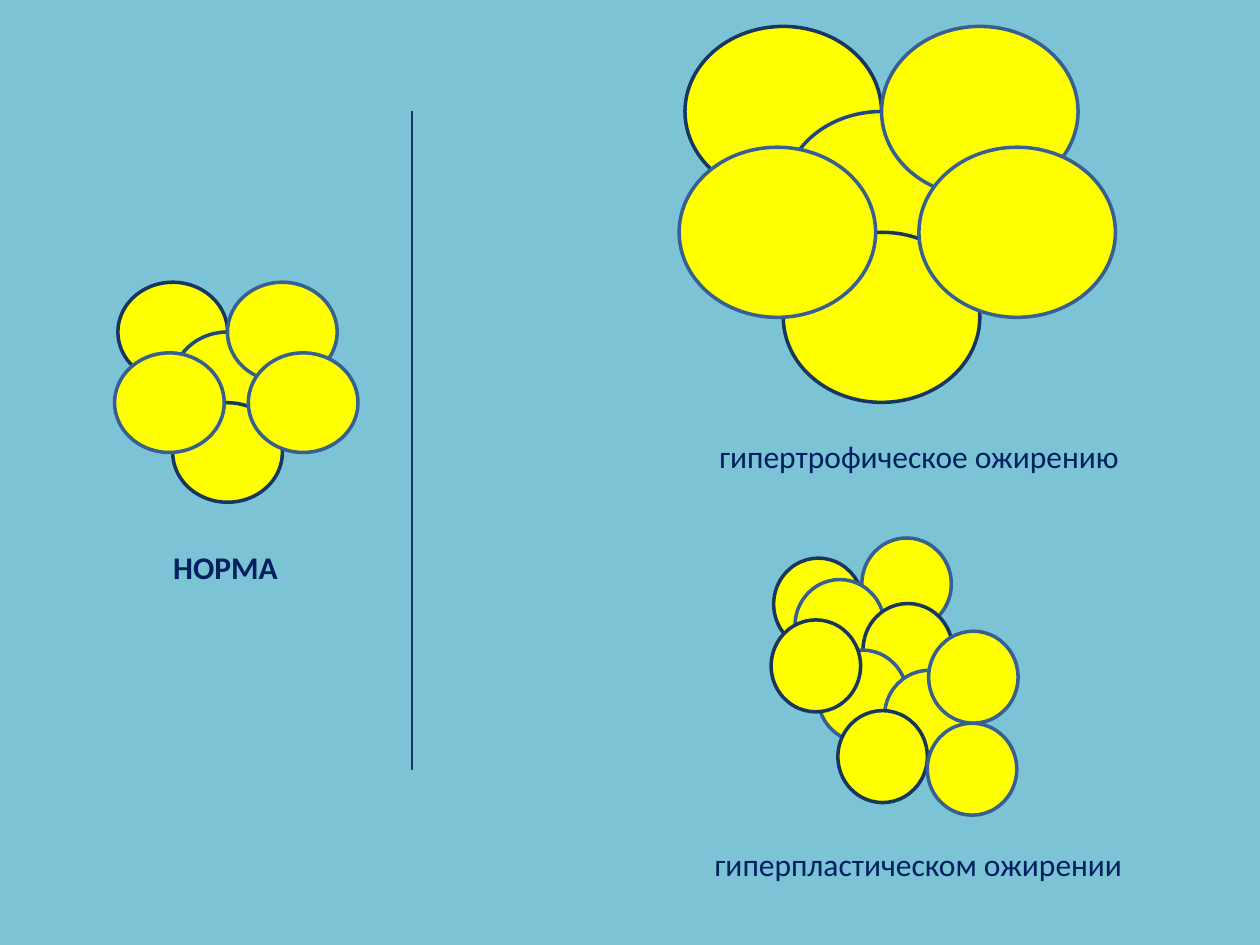
from dataclasses import dataclass

from lxml.etree import SubElement
from pptx import Presentation
from pptx.dml.color import RGBColor as Rgb
from pptx.enum.shapes import MSO_CONNECTOR as Connector, MSO_SHAPE as Shape
from pptx.enum.text import MSO_AUTO_SIZE as AutoSize, PP_ALIGN as Align
from pptx.oxml.ns import qn
from pptx.util import Inches, Pt


@dataclass(frozen=True)
class Theme:
    background: Rgb = Rgb.from_string("7CC3D6")
    fat: Rgb = Rgb.from_string("FFFF00")
    dark: Rgb = Rgb.from_string("17375E")
    medium: Rgb = Rgb.from_string("1F497D")
    light: Rgb = Rgb.from_string("376092")
    text: Rgb = Rgb.from_string("002060")
    font: str = "Calibri"
    text_size: Pt = Pt(18)
    cell_line: Pt = Pt(2)
    divider_line: Pt = Pt(0.75)


THEME = Theme()

# Cells from back to front: left and top in cell widths and heights, outline.
ROSETTE = [
    (0.03, 0, THEME.dark),
    (0.53, 0.5, THEME.medium),
    (1.03, 0, THEME.light),
    (0.53, 1.21, THEME.dark),
    (0, 0.71, THEME.light),
    (1.22, 0.71, THEME.light),
]

# Cells from back to front: left and top in inches, outline.
HYPERPLASTIC_CELLS = [
    (6.14, 4.43, THEME.dark),
    (6.84, 4.27, THEME.light),
    (6.31, 4.6, THEME.light),
    (6.85, 4.79, THEME.dark),
    (6.49, 5.16, THEME.light),
    (7.02, 5.32, THEME.light),
    (7.37, 5.01, THEME.light),
    (6.12, 4.92, THEME.dark),
    (6.65, 5.64, THEME.dark),
    (7.36, 5.74, THEME.light),
]


class SlideBuilder:
    def __init__(self, slide, theme):
        self.slide = slide
        self.theme = theme
        fill = slide.background.fill
        fill.solid()
        fill.fore_color.rgb = theme.background

    def cluster(self, cells, width, height):
        """Group equal ellipses; cells holds (left, top, outline) in inches."""
        group = self.slide.shapes.add_group_shape()
        for left, top, outline in cells:
            cell = group.shapes.add_shape(
                Shape.OVAL, Inches(left), Inches(top), Inches(width), Inches(height)
            )
            cell.shadow.inherit = False
            cell.fill.solid()
            cell.fill.fore_color.rgb = self.theme.fat
            cell.line.color.rgb = outline
            cell.line.width = self.theme.cell_line

    def rosette(self, left, top, width, height):
        """Six cells around a centre, scaled to the given cell size."""
        cells = [
            (left + column * width, top + row * height, outline)
            for column, row, outline in ROSETTE
        ]
        self.cluster(cells, width, height)

    def caption(self, text, left, top, width, bold=False):
        box = self.slide.shapes.add_textbox(
            Inches(left), Inches(top), Inches(width), Inches(0.4)
        )
        frame = box.text_frame
        frame.word_wrap = True
        frame.auto_size = AutoSize.SHAPE_TO_FIT_TEXT
        para = frame.paragraphs[0]
        para.text = text
        para.alignment = Align.CENTER
        para.font.name = self.theme.font
        para.font.size = self.theme.text_size
        para.font.bold = bold
        para.font.color.rgb = self.theme.text

    def divider(self, left, top, bottom):
        line = self.slide.shapes.add_connector(
            Connector.STRAIGHT, Inches(left), Inches(top), Inches(left), Inches(bottom)
        )
        line.line.color.rgb = self.theme.dark
        line.line.width = self.theme.divider_line
        SubElement(line._element.spPr, qn("a:effectLst"))


def main():
    deck = Presentation()
    deck.slide_width, deck.slide_height = Inches(10), Inches(7.5)
    blank_layout = deck.slide_layouts[6]
    builder = SlideBuilder(deck.slides.add_slide(blank_layout), THEME)

    builder.rosette(0.91, 2.24, width=0.87, height=0.79)
    builder.caption("НОРМА", 0.57, 4.3, 2.44, bold=True)

    builder.rosette(5.39, 0.21, width=1.56, height=1.35)
    builder.cluster(HYPERPLASTIC_CELLS, width=0.71, height=0.73)
    builder.divider(3.27, 0.88, 6.11)
    builder.caption("гипертрофическое ожирению", 5.27, 3.42, 4.05)
    builder.caption("гиперпластическом ожирении", 5.52, 6.66, 3.54)

    deck.save("out.pptx")


if __name__ == "__main__":
    main()
